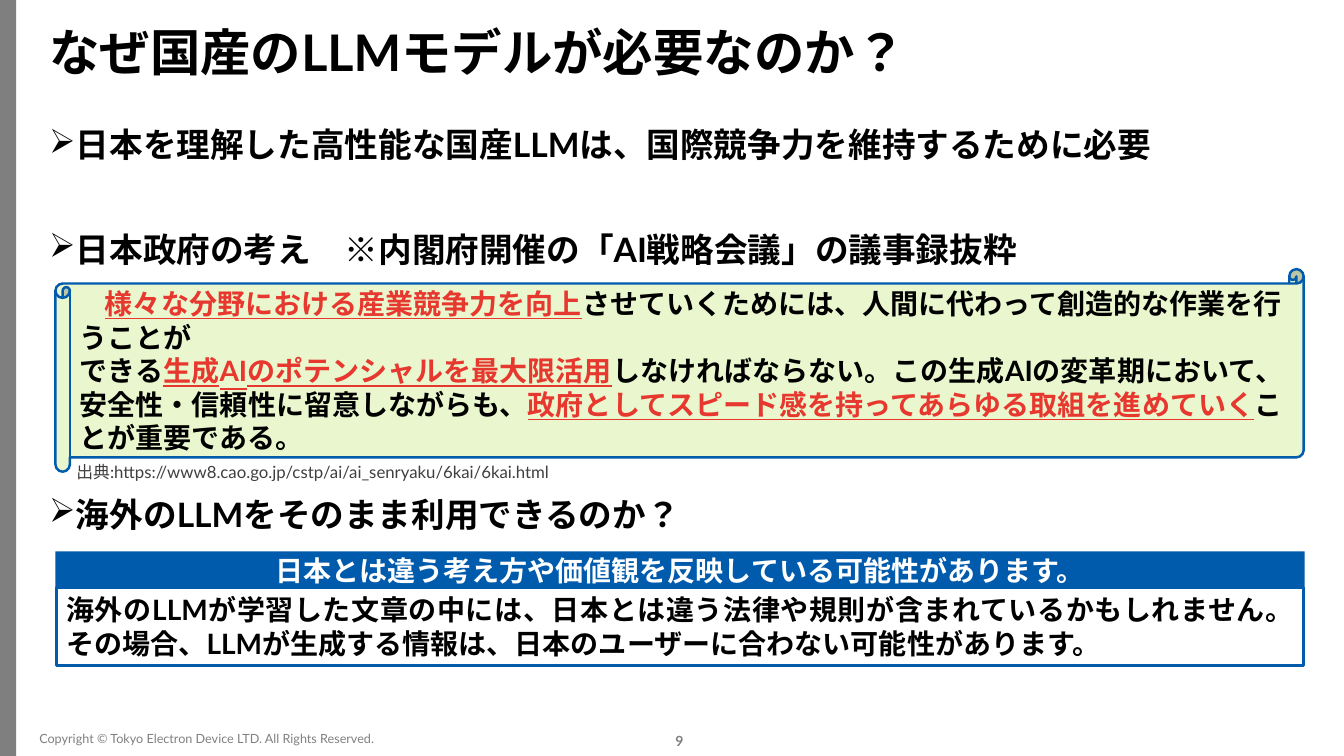
from dataclasses import dataclass, field
from typing import Any, Optional

from lxml import etree
from pptx import Presentation
from pptx import util as u
from pptx.dml.color import RGBColor
from pptx.enum import lang, shapes, text
from pptx.oxml import ns

PX = 9144
COLORS = {
    "black": "000000", "white": "FFFFFF", "red": "E7382F", "blue": "005BAC",
    "green": "EAF7CE", "bar": "7F7F7F", "footer": "808080", "source": "3F3F3F",
}
LATIN = "Lato"
EAST_ASIAN = "Noto Sans CJK JP"
ALIGN = text.PP_ALIGN
MIDDLE = text.MSO_ANCHOR.MIDDLE
TOP = text.MSO_ANCHOR.TOP
RECT = shapes.MSO_SHAPE.RECTANGLE
SCROLL = shapes.MSO_SHAPE.HORIZONTAL_SCROLL


@dataclass
class Run:
    words: str
    color: str = "black"
    underline: bool = False


@dataclass
class Para:
    runs: list[Run]
    align: Any = ALIGN.LEFT
    spacing: float = 1.0
    bullet: str = ""
    first_indent: int = 0


@dataclass
class Box:
    at: tuple[int, int, int, int]
    paras: list[Para] = field(default_factory=list)
    size: int = 20
    bold: bool = True
    anchor: Any = TOP
    inset: tuple[int, int] = (10, 5)
    preset: Optional[Any] = None
    fill: str = ""
    line: str = ""
    line_width: float = 2
    adjust: Optional[float] = None


def color(name: str) -> RGBColor:
    return RGBColor.from_string(COLORS[name])


def set_all(target: Any, values: dict[str, Any]) -> None:
    for name, value in values.items():
        setattr(target, name, value)


def add_bullet(p: Any, mark: str) -> None:
    pPr = p._p.get_or_add_pPr()
    set_all(pPr, {"marL": 39 * PX, "indent": -39 * PX})
    bu_color = etree.SubElement(pPr, ns.qn("a:buClr"))
    etree.SubElement(bu_color, ns.qn("a:srgbClr"), val=COLORS["black"])
    etree.SubElement(pPr, ns.qn("a:buChar"), char=mark)


def add_run(p: Any, run: Run, box: Box) -> None:
    r = p.add_run()
    r.text = run.words
    set_all(r.font, {
        "name": LATIN, "size": u.Pt(box.size), "bold": box.bold,
        "underline": run.underline,
        "language_id": lang.MSO_LANGUAGE_ID.JAPANESE,
    })
    r.font.color.rgb = color(run.color)
    latin = r._r.get_or_add_rPr().find(ns.qn("a:latin"))
    east = etree.Element(ns.qn("a:ea"), typeface=EAST_ASIAN)
    latin.addnext(east)


def fill_text(tf: Any, box: Box) -> None:
    side, edge = (v * PX for v in box.inset)
    set_all(tf, {
        "word_wrap": True, "vertical_anchor": box.anchor,
        "margin_left": side, "margin_right": side,
        "margin_top": edge, "margin_bottom": edge,
    })
    for i, para in enumerate(box.paras):
        p = tf.add_paragraph() if i else tf.paragraphs[0]
        set_all(p, {"alignment": para.align, "line_spacing": para.spacing})
        if para.first_indent:
            p._p.get_or_add_pPr().set("indent", str(para.first_indent * PX))
        if para.bullet:
            add_bullet(p, para.bullet)
        for run in para.runs:
            add_run(p, run, box)


def draw(s: Any, box: Box) -> None:
    at = [v * PX for v in box.at]
    if box.preset is None:
        sp = s.shapes.add_textbox(*at)
    else:
        sp = s.shapes.add_shape(box.preset, *at)
        sp.shadow.inherit = False
        if box.adjust is not None:
            sp.adjustments[0] = box.adjust
        if box.fill:
            sp.fill.solid()
            sp.fill.fore_color.rgb = color(box.fill)
        else:
            sp.fill.background()
        if box.line:
            sp.line.color.rgb = color(box.line)
            sp.line.width = u.Pt(box.line_width)
        else:
            sp.line.fill.background()
    fill_text(sp.text_frame, box)


def heading(top: int, words: str) -> Box:
    para = Para([Run(words)], spacing=0.9, bullet="➢")
    return Box((39, top, 1260, 48), [para], size=24)


def key(words: str) -> Run:
    return Run(words, "red", True)


MINUTES = [
    Para([
        key("様々な分野における産業競争力を向上"),
        Run("させていくためには、人間に代わって創造的な作業を行うことが"),
    ], first_indent=25),
    Para([
        Run("できる"),
        key("生成AIのポテンシャルを最大限活用"),
        Run("しなければならない。この生成AIの変革期において、安全性・信頼性に留意しながらも、"),
        key("政府としてスピード感を持ってあらゆる取組を進めていく"),
        Run("ことが重要である。"),
    ]),
]
RISK = (
    "海外のLLMが学習した文章の中には、日本とは違う法律や規則が含まれているかもしれません。"
    "その場合、LLMが生成する情報は、日本のユーザーに合わない可能性があります。"
)
BOXES = [
    Box((39, 725, 360, 15),
        [Para([Run("Copyright © Tokyo Electron Device LTD. All Rights Reserved.", "footer")])],
        size=9, bold=False, anchor=MIDDLE, inset=(0, 0)),
    Box((655, 725, 23, 20), [Para([Run("9", "footer")], ALIGN.RIGHT)],
        size=10, anchor=MIDDLE, inset=(0, 0)),
    Box((0, 0, 16, 750), preset=RECT, fill="bar"),
    Box((39, 27, 1090, 55), [Para([Run("なぜ国産のLLMモデルが必要なのか？")], spacing=0.9)],
        size=36, anchor=MIDDLE),
    heading(123, "日本を理解した高性能な国産LLMは、国際競争力を維持するために必要"),
    heading(227, "日本政府の考え　※内閣府開催の「AI戦略会議」の議事録抜粋"),
    heading(490, "海外のLLMをそのまま利用できるのか？"),
    Box((55, 267, 1238, 201), MINUTES, anchor=MIDDLE, preset=SCROLL,
        fill="green", line="blue", line_width=1.75, adjust=0.071),
    Box((56, 583, 1237, 77), [Para([Run(RISK)], ALIGN.JUSTIFY)],
        preset=RECT, line="blue"),
    Box((55, 547, 1239, 37),
        [Para([Run("日本とは違う考え方や価値観を反映している可能性があります。", "white")], ALIGN.CENTER)],
        anchor=MIDDLE, preset=RECT, fill="blue"),
    Box((66, 453, 520, 30),
        [Para([Run("出典:https://www8.cao.go.jp/cstp/ai/ai_senryaku/6kai/6kai.html", "source")])],
        size=12, bold=False),
]


def main() -> None:
    prs = Presentation()
    set_all(prs, {"slide_width": 1333 * PX, "slide_height": 750 * PX})
    s = prs.slides.add_slide(prs.slide_layouts[6])
    for box in BOXES:
        draw(s, box)
    prs.save("out.pptx")


if __name__ == "__main__":
    main()
